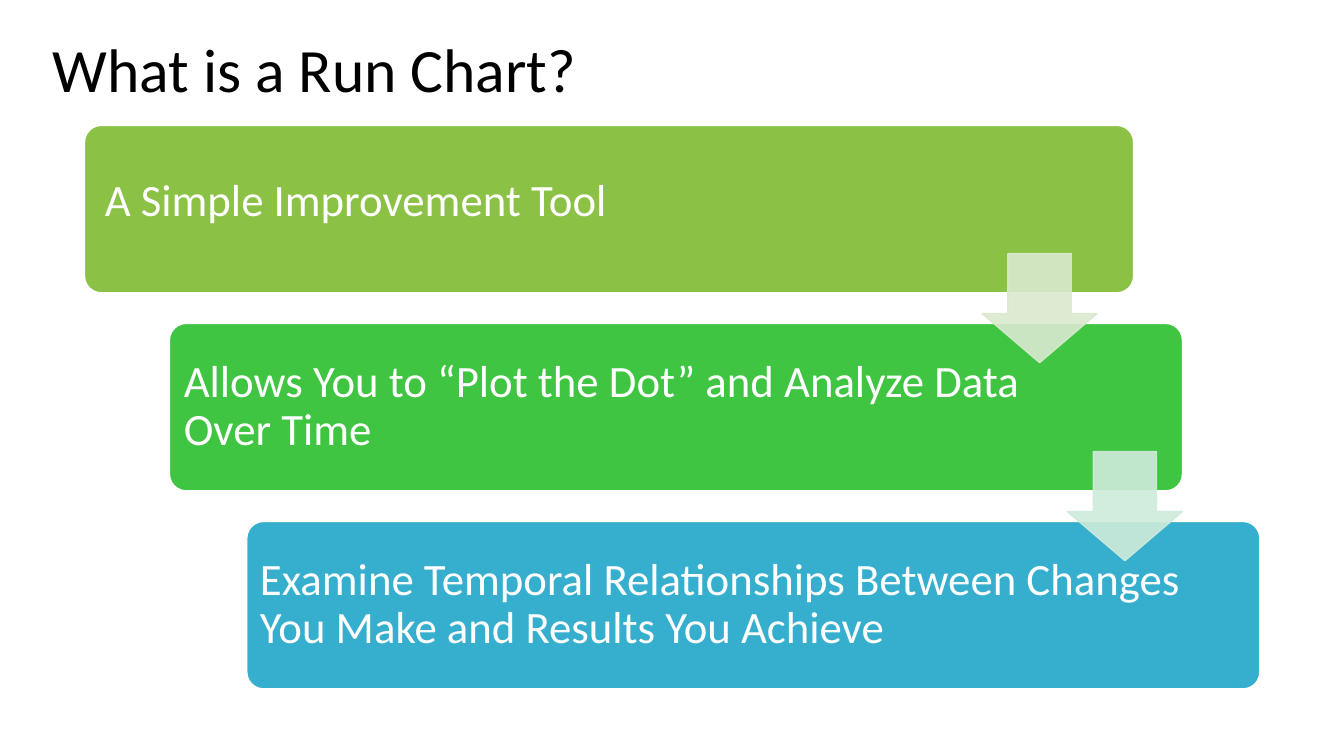
from lxml.etree import SubElement
from pptx import Presentation
from pptx.dml.color import RGBColor
from pptx.enum.shapes import MSO_SHAPE as Shape
from pptx.enum.text import MSO_ANCHOR as Anchor, MSO_AUTO_SIZE as AutoSize, PP_ALIGN as Align
from pptx.oxml.ns import qn
from pptx.util import Cm, Pt

COLORS = {
    "title": "000000", "white": "FFFFFF",
    "lime": "8BC145", "green": "40C543", "blue": "36AFCE",
    "pale lime": "DAE9CF", "pale green": "CEEBDB",
}
STEP_PITCH = 4.99  # vertical distance between steps, cm
ARROW_SHIFT = 2.15  # horizontal distance between arrows, cm


class SlideBuilder:
    font_name = "Calibri"

    def __init__(self, presentation):
        self.slide = presentation.slides.add_slide(presentation.slide_layouts[5])

    def color(self, name):
        return RGBColor.from_string(COLORS[name])

    def set_text(self, frame, text, size, color, anchor, space_after):
        frame.word_wrap = True
        frame.auto_size = AutoSize.NONE
        frame.vertical_anchor = anchor
        frame.text = text
        paragraph = frame.paragraphs[0]
        paragraph.alignment = Align.LEFT
        paragraph.line_spacing = 0.9
        paragraph.space_before = Pt(0)
        paragraph.space_after = Pt(space_after)
        paragraph.font.name = self.font_name
        paragraph.font.size = Pt(size)
        paragraph.font.color.rgb = self.color(color)

    def title(self, text, left, top, width, height):
        title = self.slide.shapes.title
        title.left, title.top, title.width, title.height = map(Cm, (left, top, width, height))
        self.set_text(title.text_frame, text, 44, "title", Anchor.BOTTOM, 6)

    def shape(self, kind, box, adjustments, fill, line):
        shape = self.slide.shapes.add_shape(kind, *map(Cm, box))
        shape.shadow.inherit = False
        for index, value in enumerate(adjustments):
            shape.adjustments[index] = value
        shape.fill.solid()
        shape.fill.fore_color.rgb = self.color(fill)
        shape.line.color.rgb = self.color(line)
        shape.line.width = Pt(1)
        return shape

    def step(self, text, box, fill, margins):
        shape = self.shape(Shape.ROUNDED_RECTANGLE, box, [0.1], fill, "white")
        frame = shape.text_frame
        (frame.margin_left, frame.margin_top,
         frame.margin_right, frame.margin_bottom) = map(Cm, margins)
        self.set_text(frame, text, 32, "white", Anchor.MIDDLE, 0)

    def arrow(self, box, color):
        shape = self.shape(Shape.DOWN_ARROW, box, [0.55, 0.45], color, color)
        # 90 % opacity for fill and outline
        for color_element in shape.element.spPr.iter(qn("a:srgbClr")):
            SubElement(color_element, qn("a:alpha"), val="90000")


def main():
    presentation = Presentation()
    presentation.slide_width, presentation.slide_height = Cm(33.87), Cm(19.05)
    builder = SlideBuilder(presentation)

    builder.title("What is a Run Chart?", 1.07, -0.03, 21.9, 2.82)

    # Staggered steps: text, left, width, fill, text margins
    steps = [
        ("A Simple Improvement Tool",
         2.13, 26.44, "lime", (0.39, 0, 1.4, 0.36)),
        ("Allows You to “Plot the Dot” and Analyze Data Over Time",
         4.27, 25.53, "green", (0.24, 0.24, 3.66, 0.24)),
        ("Examine Temporal Relationships Between Changes You Make and Results You Achieve",
         6.22, 25.53, "blue", (0.21, 0.13, 0.06, 0.13)),
    ]
    for index, (text, left, width, fill, margins) in enumerate(steps):
        builder.step(text, (left, 3.16 + index * STEP_PITCH, width, 4.22), fill, margins)

    # Arrows leading from each step to the next
    for index, color in enumerate(["pale lime", "pale green"]):
        builder.arrow((24.75 + index * ARROW_SHIFT, 6.39 + index * STEP_PITCH, 2.9, 2.75), color)

    presentation.save("out.pptx")


if __name__ == "__main__":
    main()
